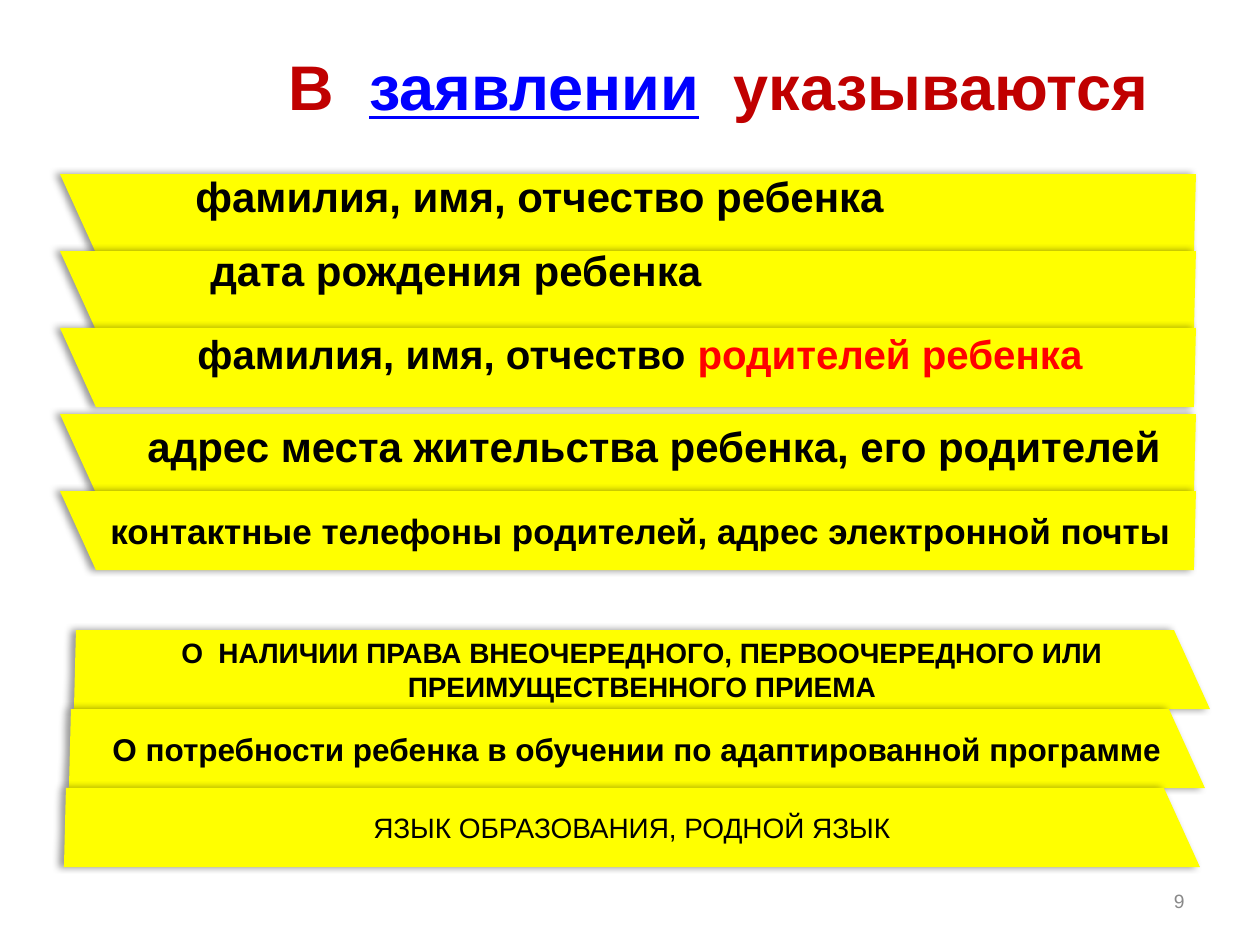
import pptx
import pptx.dml.color
import pptx.enum.text
import pptx.util
from lxml import etree

PX = 914400 / 126
NS = "http://schemas.openxmlformats.org/drawingml/2006/main"
ALIGN = pptx.enum.text.PP_ALIGN
MIDDLE = pptx.enum.text.MSO_ANCHOR.MIDDLE
TOP = pptx.enum.text.MSO_ANCHOR.TOP
BLACK, RED, YELLOW = "000000", "FF0000", "FFFF00"
WIDE, HIGH, SLANT, INSET = 1136, 79, 36, 2


def px(count):
    return pptx.util.Emu(round(count * PX))


def color(code):
    return pptx.dml.color.RGBColor.from_string(code)


def write(shape, runs, size, align=ALIGN.LEFT, anchor=TOP, bold=True):
    """Fill a shape with one paragraph; runs are (text, colour, underline)."""
    frame = shape.text_frame
    frame.word_wrap = True
    frame.vertical_anchor = anchor
    par = frame.paragraphs[0]
    par.alignment = align
    for text, code, under in runs:
        run = par.add_run()
        run.text = text
        font = run.font
        font.name, font.size, font.bold = "Arial", pptx.util.Pt(size), bold
        font.underline = under
        font.color.rgb = color(code)
    return par


def label(slide, box, runs, size, **style):
    shape = slide.shapes.add_textbox(*map(px, box))
    return write(shape, runs, size, **style)


def shade(shape):
    """Give a shape a soft shadow that falls to the left."""
    shape.shadow.inherit = False
    effects = shape._element.spPr.find(f"{{{NS}}}effectLst")
    outer = etree.SubElement(effects, f"{{{NS}}}outerShdw", blurRad="50800",
                             dist="38100", dir="10800000", rotWithShape="0")
    tint = etree.SubElement(outer, f"{{{NS}}}srgbClr", val=BLACK)
    etree.SubElement(tint, f"{{{NS}}}alpha", val="40000")


def banner(slide, left, top, turned=False):
    """Draw a yellow strip slanted at the left, or half turned."""
    points = [(0, 0), (SLANT, HIGH), (WIDE - INSET, HIGH), (WIDE, 0)]
    if turned:
        points = [(WIDE - x, HIGH - y) for x, y in points]
    points = [(left + x, top + y) for x, y in points]
    pen = slide.shapes.build_freeform(*points[0], scale=PX)
    pen.add_line_segments(points[1:], close=True)
    shape = pen.convert_to_shape()
    shape.fill.solid()
    shape.fill.fore_color.rgb = color(YELLOW)
    shape.line.fill.background()
    shade(shape)
    return shape


def heading(slide, box):
    title = slide.shapes.title
    title.left, title.top, title.width, title.height = map(px, box)
    write(title, [("В  ", "C00000", False), ("заявлении", "0000FF", True),
                  ("  указываются", "C00000", False)],
          36, ALIGN.CENTER, MIDDLE)


def details(slide, left, top):
    """Stack the upper strips, each with a text box of its own."""
    # strip offset, text box relative to the strip, size, line pitch, text
    rows = [
        (0, (123, -10, 1067, 63), 24, None,
         [("фамилия, имя, отчество ребенка", BLACK, False)]),
        (77, (138, -13, 1047, 63), 24, None,
         [("дата рождения ребенка", BLACK, False)]),
        (154, (125, 7, 1028, 50), 23, 21,
         [("фамилия, имя, отчество ", BLACK, False),
          ("родителей ребенка", RED, False)]),
        (240, (75, 0, 1062, 64), 24, None,
         [("адрес места жительства ребенка, его родителей", BLACK, False)]),
        (317, (38, 12, 1108, 55), 20, None,
         [("контактные телефоны родителей, адрес электронной почты",
           BLACK, False)]),
    ]
    for down, (x, y, wide, high), size, pitch, runs in rows:
        banner(slide, left, top + down)
        par = label(slide, (left + x, top + down + y, wide, high), runs, size)
        if pitch:
            par.line_spacing = pptx.util.Pt(pitch)


def extras(slide, left, top):
    """Stack the lower strips, each a little further to the left."""
    rows = [
        ("О  НАЛИЧИИ ПРАВА ВНЕОЧЕРЕДНОГО, ПЕРВООЧЕРЕДНОГО ИЛИ "
         "ПРЕИМУЩЕСТВЕННОГО ПРИЕМА", 16, True),
        ("О потребности ребенка в обучении по адаптированной программе",
         18, True),
        ("ЯЗЫК ОБРАЗОВАНИЯ, РОДНОЙ ЯЗЫК", 16, False),
    ]
    for row, (text, size, bold) in enumerate(rows):
        strip = banner(slide, left - 5 * row, top + HIGH * row, turned=True)
        write(strip, [(text, BLACK, False)], size, ALIGN.CENTER, MIDDLE, bold)


def main():
    deck = pptx.Presentation()
    deck.slide_width, deck.slide_height = px(1260), px(945)
    slide = deck.slides.add_slide(deck.slide_layouts[5])
    heading(slide, (212, 35, 1013, 101))
    details(slide, 60, 174)
    extras(slide, 74, 630)
    label(slide, (903, 876, 294, 50), [("9", "898989", False)], 11,
          align=ALIGN.RIGHT, anchor=MIDDLE, bold=False)
    deck.save("out.pptx")


if __name__ == "__main__":
    main()
